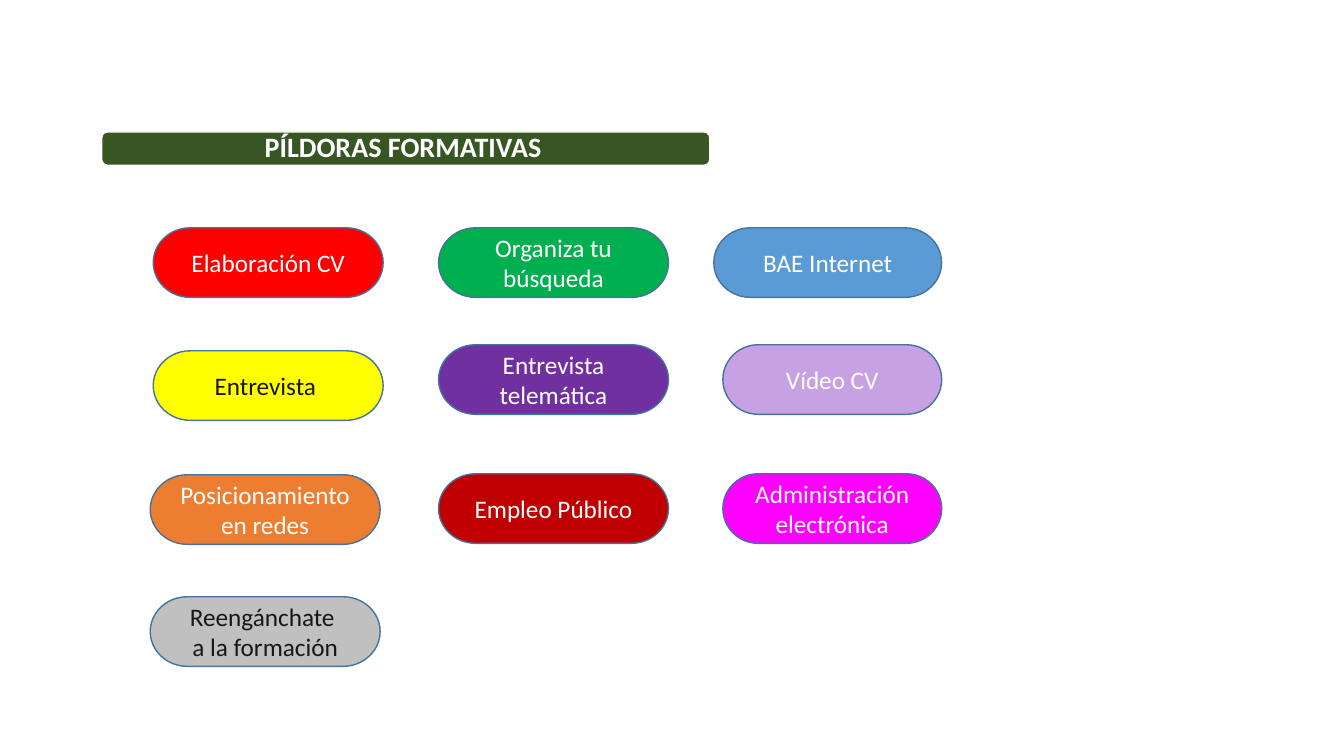
from dataclasses import dataclass

from pptx import Presentation
from pptx.dml.color import RGBColor
from pptx.enum.shapes import MSO_SHAPE
from pptx.enum.text import MSO_ANCHOR, PP_ALIGN
from pptx.shapes.autoshape import Shape
from pptx.slide import Slide
from pptx.util import Inches, Pt

ROUND = MSO_SHAPE.ROUNDED_RECTANGLE
PILL = MSO_SHAPE.FLOWCHART_TERMINATOR
MIDDLE = MSO_ANCHOR.MIDDLE
CENTER = PP_ALIGN.CENTER

FONT = "Calibri"
WHITE = RGBColor(0xFF, 0xFF, 0xFF)
INK = RGBColor(0x18, 0x17, 0x17)
EDGE = RGBColor(0x43, 0x73, 0x9E)
FOREST = RGBColor(0x38, 0x56, 0x24)
RED = RGBColor(0xFF, 0x00, 0x00)
GREEN = RGBColor(0x00, 0xB0, 0x50)
BLUE = RGBColor(0x5B, 0x9B, 0xD5)
YELLOW = RGBColor(0xFF, 0xFF, 0x00)
PURPLE = RGBColor(0x70, 0x30, 0xA0)
LILAC = RGBColor(0xC7, 0xA1, 0xE3)
ORANGE = RGBColor(0xED, 0x7D, 0x31)
CRIMSON = RGBColor(0xC0, 0x00, 0x00)
PINK = RGBColor(0xFF, 0x00, 0xFF)
GREY = RGBColor(0xC0, 0xC0, 0xC0)

# Grid of pills, in inches
COLUMNS = (1.52, 4.35, 7.17)
WIDTHS = (2.28, 2.28, 2.17)
TOP, PITCH, HEIGHT = 2.26, 1.22, 0.69


@dataclass(frozen=True)
class Topic:
    text: str
    col: int
    row: int
    fill: RGBColor
    ink: RGBColor = WHITE
    dx: float = 0
    dy: float = 0
    extra: float = 0  # added width


TOPICS = (
    Topic("Elaboración CV", 0, 0, RED),
    Topic("Organiza tu búsqueda", 1, 0, GREEN),
    Topic("BAE Internet", 2, 0, BLUE, dx=-0.09, extra=0.09),
    Topic("Entrevista ", 0, 1, YELLOW, INK),
    Topic("Entrevista telemática", 1, 1, PURPLE, dy=-0.06),
    Topic("Vídeo CV", 2, 1, LILAC, dy=-0.06),
    Topic("Posicionamiento en redes", 0, 2, ORANGE, dx=-0.03, dy=0.01),
    Topic("Empleo Público", 1, 2, CRIMSON),
    Topic("Administración electrónica", 2, 2, PINK),
    Topic("Reengánchate \na la formación", 0, 3, GREY, INK, dx=-0.03),
)


def add_box(slide: Slide, kind: MSO_SHAPE, left: float, top: float,
            width: float, height: float, fill: RGBColor, edge: RGBColor) -> Shape:
    box = slide.shapes.add_shape(
        kind, Inches(left), Inches(top), Inches(width), Inches(height))
    box.shadow.inherit = False
    box.fill.solid()
    box.fill.fore_color.rgb = fill
    box.line.color.rgb = edge
    box.line.width = Pt(1)
    return box


def write(box: Shape, text: str, size: int, ink: RGBColor, bold: bool = False) -> None:
    frame = box.text_frame
    frame.word_wrap = True
    frame.vertical_anchor = MIDDLE
    frame.text = text
    for para in frame.paragraphs:
        para.alignment = CENTER
        para.font.name = FONT
        para.font.size = Pt(size)
        para.font.bold = bold
        para.font.color.rgb = ink


def add_title(slide: Slide) -> None:
    add_box(slide, ROUND, 1.01, 1.31, 6.03, 0.33, FOREST, WHITE)
    label = slide.shapes.add_textbox(
        Inches(1.03), Inches(1.32), Inches(6), Inches(0.3))
    write(label, "PÍLDORAS FORMATIVAS ", 20, WHITE, bold=True)
    frame = label.text_frame
    frame.margin_left = frame.margin_right = Inches(0.08)
    frame.margin_top = frame.margin_bottom = Inches(0.08)
    frame.paragraphs[0].line_spacing = 0.9


def add_topic(slide: Slide, topic: Topic) -> None:
    pill = add_box(
        slide, PILL, COLUMNS[topic.col] + topic.dx,
        TOP + topic.row * PITCH + topic.dy,
        WIDTHS[topic.col] + topic.extra, HEIGHT, topic.fill, EDGE)
    write(pill, topic.text, 18, topic.ink)


def main() -> None:
    deck = Presentation()
    deck.slide_width, deck.slide_height = Inches(13.33), Inches(7.5)
    slide = deck.slides.add_slide(deck.slide_layouts[6])
    add_title(slide)
    for topic in TOPICS:
        add_topic(slide, topic)
    deck.save("out.pptx")


if __name__ == "__main__":
    main()
